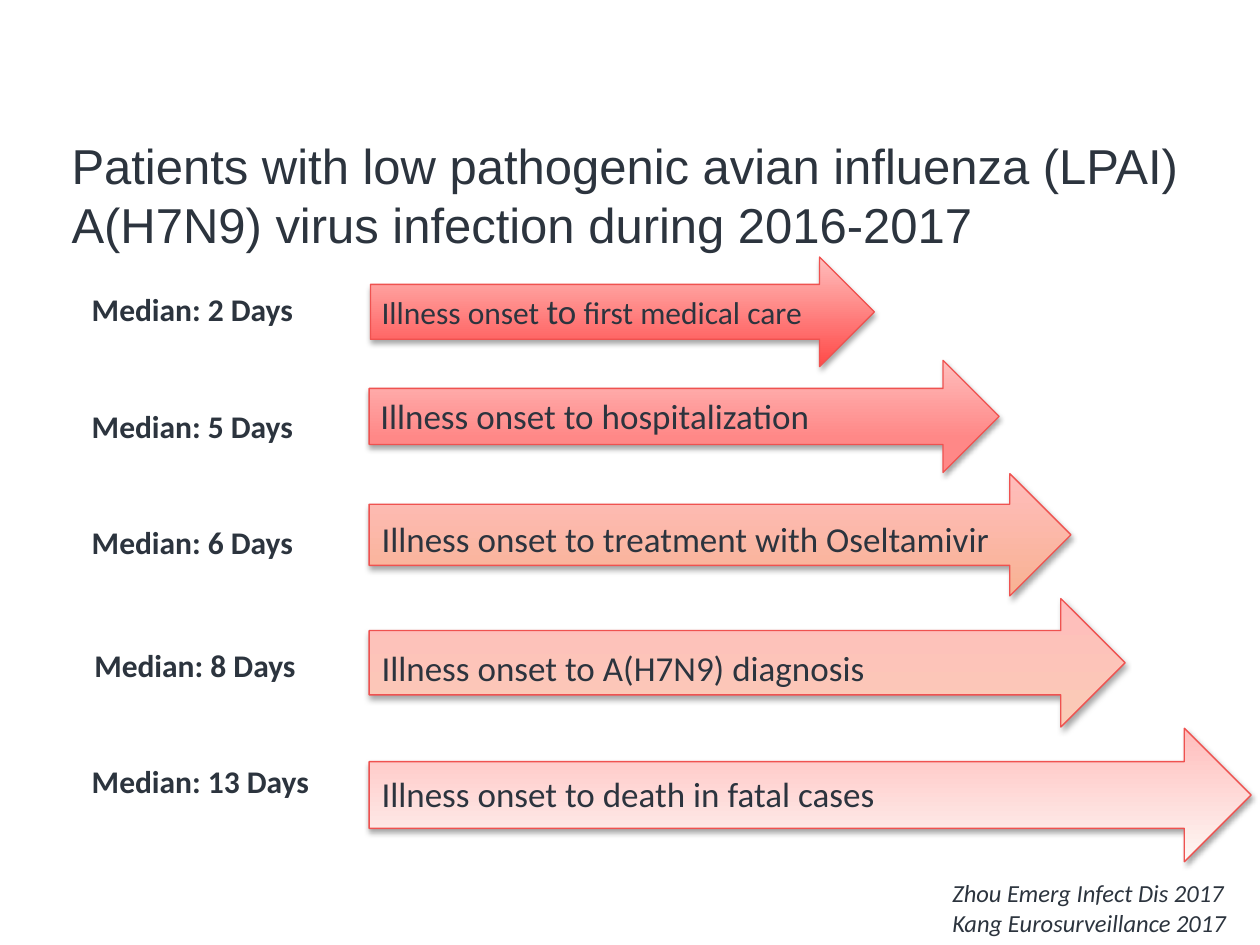
from dataclasses import dataclass

from lxml.etree import SubElement
from pptx import Presentation
from pptx.dml.color import RGBColor
from pptx.enum.shapes import MSO_SHAPE
from pptx.oxml.ns import qn
from pptx.slide import Slide
from pptx.text.text import TextFrame
from pptx.util import Inches, Length, Pt


@dataclass(frozen=True)
class Theme:
    ink: str = "2C343E"
    outline: str = "EF5250"
    highlight: str = "FFBDBC"
    shadow: str = "000000"
    title_font: str = "Arial"
    body_font: str = "Calibri"
    title_size: int = 28
    caption_size: int = 20
    label_size: int = 18
    source_size: int = 14


@dataclass(frozen=True)
class Box:
    column: float
    row: float
    columns: float
    rows: float


@dataclass(frozen=True)
class Interval:
    median: str
    median_box: Box
    caption: tuple[str, ...]
    caption_box: Box
    arrow_box: Box
    color: str
    start: float = 0


THEME = Theme()
SLIDE_WIDTH, SLIDE_HEIGHT = Inches(10), Inches(7.5)
GRID_COLUMNS, GRID_ROWS = 100, 75
INTERVALS = (
    Interval("Median: 2 Days", Box(6.3, 22.5, 19.4, 4),
             ("Illness onset ", "to", " first medical care"),
             Box(29.3, 22.5, 35.5, 4.4), Box(29.4, 20.4, 40, 8.7), "FF4A48"),
    Interval("Median: 5 Days", Box(6.3, 31.8, 19.4, 4),
             ("Illness onset to hospitalization",),
             Box(29.2, 30.8, 39.9, 4.4), Box(29.3, 28.6, 50, 8.9), "FF8887", 0.31),
    Interval("Median: 6 Days", Box(6.3, 41, 19.4, 4),
             ("Illness onset to treatment with Oseltamivir",),
             Box(29.3, 40.6, 60, 4.4), Box(29.3, 37.6, 55.7, 9.7), "F8B293"),
    Interval("Median: 8 Days", Box(6.5, 50.8, 19.4, 4),
             ("Illness onset to A(H7N9) diagnosis",),
             Box(29.3, 50.8, 48.1, 4.4), Box(29.3, 47.5, 60, 10.2), "FACBB6"),
    Interval("Median: 13 Days", Box(6.3, 60, 19.4, 4),
             ("Illness onset to death in fatal cases",),
             Box(29.3, 60.8, 61.4, 4.4), Box(29.3, 57.8, 70, 10.6), "FEF7F4"),
)


def place(box: Box) -> tuple[Length, Length, Length, Length]:
    column, row = SLIDE_WIDTH / GRID_COLUMNS, SLIDE_HEIGHT / GRID_ROWS
    return (Length(box.column * column), Length(box.row * row),
            Length(box.columns * column), Length(box.rows * row))


def add_text(slide: Slide, box: Box, text: str, size: int,
             font: str = THEME.body_font, bold: bool = False,
             italic: bool = False) -> TextFrame:
    text_frame = slide.shapes.add_textbox(*place(box)).text_frame
    text_frame.word_wrap = True
    text_frame.text = text
    for paragraph in text_frame.paragraphs:
        for run in paragraph.runs:
            run.font.name = font
            run.font.size = Pt(size)
            run.font.bold = bold
            run.font.italic = italic
            run.font.color.rgb = RGBColor.from_string(THEME.ink)
    return text_frame


def add_caption(slide: Slide, interval: Interval) -> None:
    first, *others = interval.caption
    size = THEME.label_size if others else THEME.caption_size
    text_frame = add_text(slide, interval.caption_box, first, size)
    for index, text in enumerate(others):
        run = text_frame.paragraphs[0].add_run()
        run.text = text
        run.font.name = THEME.body_font
        run.font.size = Pt(THEME.label_size if index % 2 else THEME.caption_size)
        run.font.color.rgb = RGBColor.from_string(THEME.ink)


def add_arrow(slide: Slide, interval: Interval) -> None:
    arrow = slide.shapes.add_shape(MSO_SHAPE.RIGHT_ARROW, *place(interval.arrow_box))
    arrow.fill.gradient()
    arrow.fill.gradient_angle = 90
    stops = zip(arrow.fill.gradient_stops, (interval.start, 1),
                (interval.color, THEME.highlight))
    for stop, position, color in stops:
        stop.position = position
        stop.color.rgb = RGBColor.from_string(color)
    arrow.line.color.rgb = RGBColor.from_string(THEME.outline)
    arrow.line.width = Pt(0.75)
    arrow.shadow.inherit = False
    effects = arrow.element.spPr.find(qn("a:effectLst"))
    shadow = SubElement(effects, qn("a:outerShdw"), blurRad=str(Pt(3.1)),
                        dist=str(Pt(1.8)), dir="5400000", rotWithShape="0")
    color = SubElement(shadow, qn("a:srgbClr"), val=THEME.shadow)
    SubElement(color, qn("a:alpha"), val="35000")


def main() -> None:
    presentation = Presentation()
    presentation.slide_width, presentation.slide_height = SLIDE_WIDTH, SLIDE_HEIGHT
    slide = presentation.slides.add_slide(presentation.slide_layouts[6])
    add_text(slide, Box(4.7, 10.3, 92.7, 10),
             "Patients with low pathogenic avian influenza (LPAI) "
             "A(H7N9) virus infection during 2016-2017",
             THEME.title_size, THEME.title_font)
    for interval in INTERVALS:
        add_arrow(slide, interval)
        add_caption(slide, interval)
        add_text(slide, interval.median_box, interval.median,
                 THEME.label_size, bold=True)
    add_text(slide, Box(74.6, 69.2, 25.4, 5.7),
             "Zhou Emerg Infect Dis 2017\nKang Eurosurveillance 2017",
             THEME.source_size, italic=True)
    presentation.save("out.pptx")


if __name__ == "__main__":
    main()
